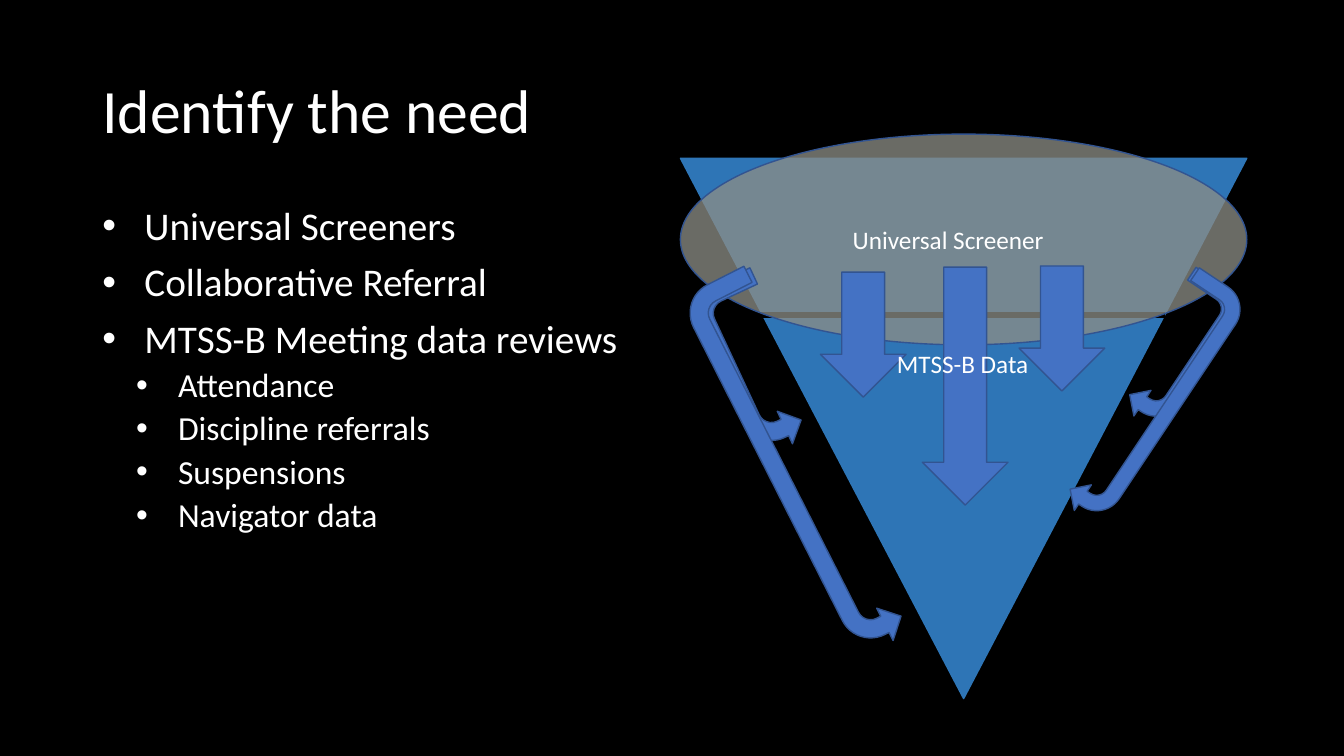
"""Build the "Identify the need" slide with its screening funnel."""
from dataclasses import dataclass

from lxml import etree
from pptx import Presentation
from pptx.dml.color import RGBColor as RGB
from pptx.enum.shapes import MSO_CONNECTOR as CONNECTOR, MSO_SHAPE as SHAPE
from pptx.enum.text import MSO_ANCHOR as ANCHOR, MSO_AUTO_SIZE as AUTO, PP_ALIGN as ALIGN
from pptx.oxml.ns import qn
from pptx.util import Pt


@dataclass(frozen=True)
class Theme:
    """Colours, font and type sizes."""
    font: str = "Calibri"
    background: str = "000000"
    text: str = "FFFFFF"
    funnel: str = "2E75B6"
    screener: str = "8C8D86"
    arrow: str = "4472C4"
    outline: str = "325491"
    title_size: int = 44
    level_sizes: tuple = (28, 24)
    label_size: int = 18


class SlideBuilder:
    """Adds styled elements to one slide."""

    def __init__(self, slide, theme):
        self.slide, self.theme = slide, theme
        fill = slide.background.fill
        fill.solid()
        fill.fore_color.rgb = RGB.from_string(theme.background)

    def style(self, paragraph, size):
        paragraph.alignment = ALIGN.LEFT
        paragraph.font.name = self.theme.font
        paragraph.font.size = Pt(size)
        paragraph.font.color.rgb = RGB.from_string(self.theme.text)

    def place(self, placeholder, left, top, width, height):
        placeholder.left, placeholder.top = Pt(left), Pt(top)
        placeholder.width, placeholder.height = Pt(width), Pt(height)
        placeholder.text_frame.auto_size = AUTO.NONE
        return placeholder.text_frame

    def title(self, text, *box):
        frame = self.place(self.slide.shapes.title, *box)
        frame.vertical_anchor = ANCHOR.MIDDLE
        frame.text = text
        heading = frame.paragraphs[0]
        heading.line_spacing = 0.9
        self.style(heading, self.theme.title_size)

    def bullets(self, items, *box):
        frame = self.place(self.slide.placeholders[1], *box)
        for index, (level, text) in enumerate(items):
            item = frame.add_paragraph() if index else frame.paragraphs[0]
            item.text, item.level = text, level
            item.line_spacing = 0.9
            item.space_before = Pt((10, 5)[level] if index else 0)
            properties = item._p.get_or_add_pPr()
            properties.set("marL", str(Pt(30 + 24 * level)))
            properties.set("indent", str(Pt(-30)))
            etree.SubElement(properties, qn("a:buChar")).set("char", "•")
            self.style(item, self.theme.level_sizes[level])

    def shape(self, kind, left, top, width, height, fill, line, rotation=0, flip=False, opacity=100):
        shape = self.slide.shapes.add_shape(kind, Pt(left), Pt(top), Pt(width), Pt(height))
        shape.shadow.inherit = False
        shape.rotation = rotation
        shape.fill.solid()
        shape.fill.fore_color.rgb = RGB.from_string(fill)
        shape.line.color.rgb = RGB.from_string(line)
        shape.line.width = Pt(1)
        if flip:
            shape._element.spPr.find(qn("a:xfrm")).set("flipH", "1")
        if opacity < 100:
            color = shape._element.spPr.find(qn("a:solidFill"))[0]
            etree.SubElement(color, qn("a:alpha")).set("val", str(opacity * 1000))

    def arrow(self, kind, *box, rotation=0, flip=False):
        self.shape(kind, *box, self.theme.arrow, self.theme.outline, rotation, flip)

    def divider(self, left, right, y):
        line = self.slide.shapes.add_connector(CONNECTOR.STRAIGHT, Pt(left), Pt(y), Pt(right), Pt(y))
        line.line.color.rgb = RGB.from_string(self.theme.background)
        line.line.width = Pt(4.5)
        etree.SubElement(line._element.spPr, qn("a:effectLst"))

    def label(self, text, left, top):
        frame = self.slide.shapes.add_textbox(Pt(left), Pt(top), Pt(171), Pt(29)).text_frame
        frame.word_wrap = True
        frame.auto_size = AUTO.SHAPE_TO_FIT_TEXT
        frame.text = text
        self.style(frame.paragraphs[0], self.theme.label_size)


def main():
    """Compose and save the slide."""
    deck = Presentation()
    deck.slide_width, deck.slide_height = Pt(960), Pt(540)
    theme = Theme()
    page = SlideBuilder(deck.slides.add_slide(deck.slide_layouts[1]), theme)

    page.title("Identify the need", 66, 28.8, 828, 104.4)
    page.bullets([
        (0, "Universal Screeners"),
        (0, "Collaborative Referral"),
        (0, "MTSS-B Meeting data reviews"),
        (1, "Attendance"),
        (1, "Discipline referrals"),
        (1, "Suspensions"),
        (1, "Navigator data"),
    ], 66, 144, 828, 342.7)

    page.shape(SHAPE.ISOSCELES_TRIANGLE, 486, 113, 404.6, 386, theme.funnel, theme.funnel, rotation=180)
    page.divider(542, 832.5, 224.8)
    page.shape(SHAPE.OVAL, 486, 95.8, 404.6, 150.5, theme.screener, theme.outline, opacity=76)
    page.label("Universal Screener", 602, 156.4)

    for box, rotation, flip in (
        ((784.8, 228.2, 113, 43.9), 123.7, False),
        ((724.3, 262.1, 193.7, 43.9), 123.7, False),
        ((475.9, 234, 126.7, 51.1), 245, True),
        ((429.8, 303.8, 286.6, 51.8), 243.1, True),
    ):
        page.arrow(SHAPE.U_TURN_ARROW, *box, rotation=rotation, flip=flip)
    for left, top, height in ((586, 194.4, 89.3), (658.8, 190.8, 170), (727.9, 190, 89.3)):
        page.arrow(SHAPE.DOWN_ARROW, left, top, 61.2, height)
    page.label("MTSS-B Data", 633.6, 245.5)

    deck.save("out.pptx")


if __name__ == "__main__":
    main()
